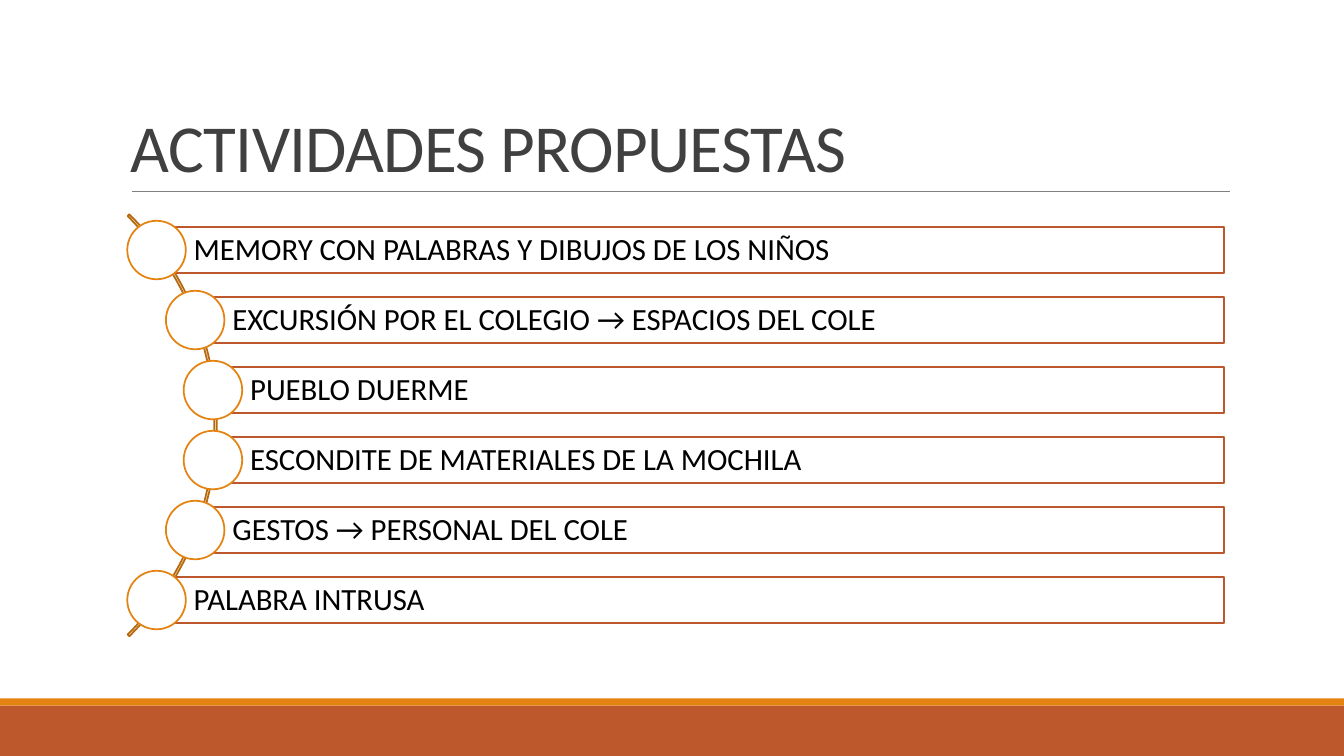
from lxml.etree import SubElement
from pptx import Presentation
from pptx.dml.color import RGBColor
from pptx.enum.shapes import MSO_CONNECTOR as Connector, MSO_SHAPE as Shape
from pptx.enum.text import MSO_ANCHOR as Anchor, PP_ALIGN as Align
from pptx.oxml.ns import qn
from pptx.util import Pt

WHITE = RGBColor(0xFF, 0xFF, 0xFF)
BLACK = RGBColor(0x00, 0x00, 0x00)
CHARCOAL = RGBColor(0x40, 0x40, 0x40)
GREY = RGBColor(0x80, 0x80, 0x80)
RUST = RGBColor(0xBD, 0x58, 0x2C)
ORANGE = RGBColor(0xE4, 0x83, 0x12)
BROWN = RGBColor(0xB7, 0x69, 0x0E)

FONT = "Calibri"
PAGE_WIDTH, PAGE_HEIGHT = 960, 540
FIRST_MIDDLE, ROW_STEP = 178.6, 50
BAR_RIGHT, BAR_HEIGHT = 874.1, 33.3
CIRCLE_SIZE = 41.8
ACTIVITIES = [
    (111.8, "MEMORY CON PALABRAS Y DIBUJOS DE LOS NIÑOS"),
    (139.4, "EXCURSIÓN POR EL COLEGIO → ESPACIOS DEL COLE"),
    (152.1, "PUEBLO DUERME"),
    (152.1, "ESCONDITE DE MATERIALES DE LA MOCHILA"),
    (139.4, "GESTOS → PERSONAL DEL COLE"),
    (111.8, "PALABRA INTRUSA"),
]


def add_figure(page, kind, left, top, width, height, fill=None, line=None):
    """Add a preset shape with an optional fill and outline."""
    figure = page.shapes.add_shape(kind, Pt(left), Pt(top), Pt(width), Pt(height))
    figure.shadow.inherit = False
    if fill is None:
        figure.fill.background()
    else:
        figure.fill.solid()
        figure.fill.fore_color.rgb = fill
    if line is None:
        figure.line.fill.background()
    else:
        figure.line.color.rgb = line
        figure.line.width = Pt(1.25)
    return figure


def write_text(box, text, size, color, spacing, anchor):
    """Write one left-aligned paragraph and return its run."""
    frame = box.text_frame
    frame.text = text
    frame.word_wrap = True
    frame.vertical_anchor = anchor
    para = frame.paragraphs[0]
    para.alignment = Align.LEFT
    para.line_spacing = spacing
    span = para.runs[0]
    span.font.name = FONT
    span.font.size = Pt(size)
    span.font.color.rgb = color
    return span


def add_title(page, text):
    """Add the slightly condensed title and the rule below it."""
    box = page.shapes.add_textbox(Pt(86.4), Pt(22.6), Pt(792), Pt(114.2))
    span = write_text(box, text, 48, CHARCOAL, 0.85, Anchor.BOTTOM)
    span.font._element.set("spc", "-50")
    rule = page.shapes.add_connector(
        Connector.STRAIGHT, Pt(94.3), Pt(136.8), Pt(878.6), Pt(136.8))
    rule.line.color.rgb = GREY
    rule.line.width = Pt(0.5)
    SubElement(rule._element.spPr, qn("a:effectLst"))


def add_arc(page):
    """Add the thin arc that links the circles."""
    arc = add_figure(page, Shape.BLOCK_ARC, -271.4, 90.7, 426.2, 426.2, line=BROWN)
    for index, value in enumerate((189, 27, 0.004)):
        arc.adjustments[index] = value


def add_activity(page, middle, left, text):
    """Add an activity bar with a circle centred on its left edge."""
    bar = add_figure(page, Shape.RECTANGLE, left, middle - BAR_HEIGHT / 2,
                     BAR_RIGHT - left, BAR_HEIGHT, WHITE, RUST)
    frame = bar.text_frame
    frame.margin_left = Pt(26.6)
    frame.margin_top = frame.margin_right = frame.margin_bottom = Pt(4.3)
    write_text(bar, text, 22, BLACK, 0.9, Anchor.MIDDLE)
    add_figure(page, Shape.OVAL, left - CIRCLE_SIZE / 2, middle - CIRCLE_SIZE / 2,
               CIRCLE_SIZE, CIRCLE_SIZE, WHITE, ORANGE)


def main():
    """Build and save the slide."""
    deck = Presentation()
    deck.slide_width, deck.slide_height = Pt(PAGE_WIDTH), Pt(PAGE_HEIGHT)
    page = deck.slides.add_slide(deck.slide_layouts[6])
    add_figure(page, Shape.RECTANGLE, 0, 504, PAGE_WIDTH, 36, RUST)
    add_figure(page, Shape.RECTANGLE, 0, 498.8, PAGE_WIDTH, 5.2, ORANGE)
    add_title(page, "ACTIVIDADES PROPUESTAS")
    add_arc(page)
    for row, (left, text) in enumerate(ACTIVITIES):
        add_activity(page, FIRST_MIDDLE + row * ROW_STEP, left, text)
    deck.save("out.pptx")


if __name__ == "__main__":
    main()
